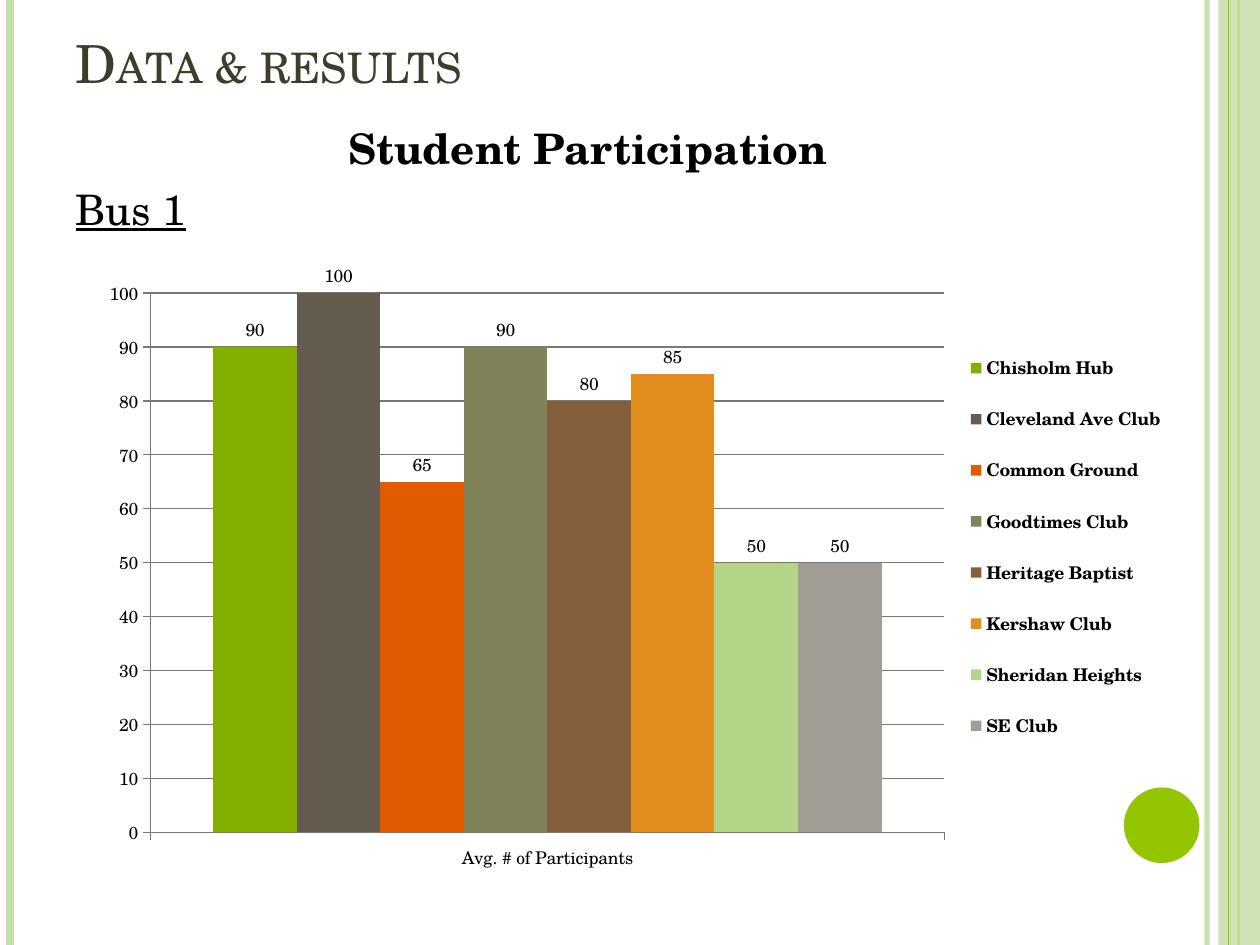
"""Build the Bus 1 student participation slide with its column chart."""
from lxml import etree
from pptx import Presentation
from pptx.chart.data import CategoryChartData
from pptx.dml.color import RGBColor
from pptx.enum import chart as ch, shapes, text
from pptx.oxml import parse_xml
from pptx.oxml.ns import nsdecls, qn
from pptx.util import Inches, Pt

FONT = "TeX Gyre Schola"
PALE = RGBColor(0xC8, 0xDF, 0xAB)
GREEN = RGBColor(0x94, 0xC6, 0x00)
OLIVE = RGBColor(0x3E, 0x3D, 0x2D)
BLACK = RGBColor(0, 0, 0)
GRID = RGBColor(0x78, 0x78, 0x78)
SERIES = [
    ("Chisholm Hub", 90, RGBColor(0x83, 0xAF, 0x00)),
    ("Cleveland Ave Club", 100, RGBColor(0x64, 0x5C, 0x4F)),
    ("Common Ground", 65, RGBColor(0xE2, 0x5B, 0x00)),
    ("Goodtimes Club", 90, RGBColor(0x80, 0x83, 0x59)),
    ("Heritage Baptist", 80, RGBColor(0x84, 0x5F, 0x3B)),
    ("Kershaw Club", 85, RGBColor(0xE1, 0x8E, 0x1E)),
    ("Sheridan Heights", 50, RGBColor(0xB4, 0xD5, 0x88)),
    ("SE Club", 50, RGBColor(0xA1, 0x9D, 0x95)),
]


def set_alpha(shape, percent):
    clr = next(shape._element.spPr.iter(qn("a:srgbClr")))
    etree.SubElement(clr, qn("a:alpha")).set("val", str(percent * 1000))


def layout_xml(x, y, w, h, inner=""):
    return parse_xml(
        f'<c:layout {nsdecls("c")}><c:manualLayout>{inner}'
        '<c:xMode val="edge"/><c:yMode val="edge"/>'
        f'<c:x val="{x}"/><c:y val="{y}"/><c:w val="{w}"/><c:h val="{h}"/>'
        "</c:manualLayout></c:layout>")


prs = Presentation()
prs.slide_width, prs.slide_height = Inches(10), Inches(7.5)
s = prs.slides.add_slide(prs.slide_layouts[1])

band = s.shapes.add_shape(shapes.MSO_SHAPE.RECTANGLE, Inches(9.67), 0, Inches(0.33), Inches(7.5))
dot = s.shapes.add_shape(shapes.MSO_SHAPE.OVAL, Inches(8.92), Inches(6.25), Inches(0.6), Inches(0.6))
for sp, color in ((band, PALE), (dot, GREEN)):
    sp.shadow.inherit = False
    sp.fill.solid()
    sp.fill.fore_color.rgb = color
    sp.line.fill.background()
set_alpha(band, 87)

for x, color, width, alpha in ((9.58, PALE, 3, 93), (0.08, PALE, 4.5, 100),
                               (9.83, GREEN, 1.5, 100), (9.75, GREEN, 0.75, 100)):
    line = s.shapes.add_connector(shapes.MSO_CONNECTOR.STRAIGHT, Inches(x), 0, Inches(x), Inches(7.5))
    line.line.color.rgb = color
    line.line.width = Pt(width)
    if alpha < 100:
        set_alpha(line, alpha)
    etree.SubElement(line._element.spPr, qn("a:effectLst"))
    if x == 9.83:
        band._element.addprevious(line._element)

title, body = s.shapes.title, s.placeholders[1]
for sp, box in ((title, (0.5, 0.17, 8.17, 0.63)), (body, (0.5, 0.92, 8.33, 5.75))):
    sp.left, sp.top, sp.width, sp.height = map(Inches, box)
    sp.text_frame.auto_size = text.MSO_AUTO_SIZE.NONE
title.text_frame.vertical_anchor = text.MSO_ANCHOR.BOTTOM

tf = body.text_frame
paragraphs = (
    (title.text_frame.paragraphs[0], "Data & results", text.PP_ALIGN.LEFT, 0, OLIVE,
     {"size": Pt(30)}),
    (tf.paragraphs[0], "Student Participation", text.PP_ALIGN.CENTER, 6, BLACK,
     {"size": Pt(24), "bold": True}),
    (tf.add_paragraph(), "Bus 1", text.PP_ALIGN.LEFT, 6, BLACK,
     {"size": Pt(24), "underline": True}),
)
for p, words, align, before, color, fmt in paragraphs:
    p.alignment, p.space_before = align, Pt(before)
    r = p.add_run()
    r.text = words
    r.font.name, r.font.color.rgb = FONT, color
    for key, value in fmt.items():
        setattr(r.font, key, value)
title.text_frame.paragraphs[0].runs[0]._r.get_or_add_rPr().set("cap", "small")
for p in tf.paragraphs:
    pPr = p._p.get_or_add_pPr()
    pPr.set("marL", "0")
    pPr.set("indent", "0")
    etree.SubElement(pPr, qn("a:buNone"))

data = CategoryChartData()
data.categories = ["Avg. # of Participants"]
for name, value, color in SERIES:
    data.add_series(name, [value])
chart = s.shapes.add_chart(ch.XL_CHART_TYPE.COLUMN_CLUSTERED, Inches(0.67), Inches(2.08),
                           Inches(8.75), Inches(4.92), data).chart
chart.has_title = False
chart.font.name, chart.font.size, chart.font.color.rgb = FONT, Pt(10), BLACK

plot = chart.plots[0]
plot.gap_width, plot.overlap, plot.vary_by_categories = 150, 0, False
for series, (name, value, color) in zip(plot.series, SERIES):
    series.format.fill.solid()
    series.format.fill.fore_color.rgb = color
    labels = series.data_labels
    labels.show_value = True
    labels.position = ch.XL_LABEL_POSITION.OUTSIDE_END

axis = chart.value_axis
axis.minimum_scale, axis.maximum_scale, axis.major_unit = 0, 100, 10
axis.has_major_gridlines = True
for ax in (axis, chart.category_axis):
    ax.major_tick_mark = ch.XL_TICK_MARK.OUTSIDE
    ax.format.line.color.rgb = GRID
axis.major_gridlines.format.line.color.rgb = GRID

chart.has_legend = True
legend = chart.legend
legend.position, legend.include_in_layout = ch.XL_LEGEND_POSITION.RIGHT, False
legend.font.bold, legend.font.size = True, Pt(10)
legend.font.name, legend.font.color.rgb = FONT, BLACK

plot_area = chart._chartSpace.chart.plotArea
for parent in (plot_area, legend._element):
    for old in parent.findall(qn("c:layout")):
        parent.remove(old)
plot_area.insert(0, layout_xml(0.06, 0.05, 0.72, 0.87, '<c:layoutTarget val="inner"/>'))
legend._element.find(qn("c:legendPos")).addnext(layout_xml(0.79, 0.11, 0.2, 0.7))

prs.save("out.pptx")
